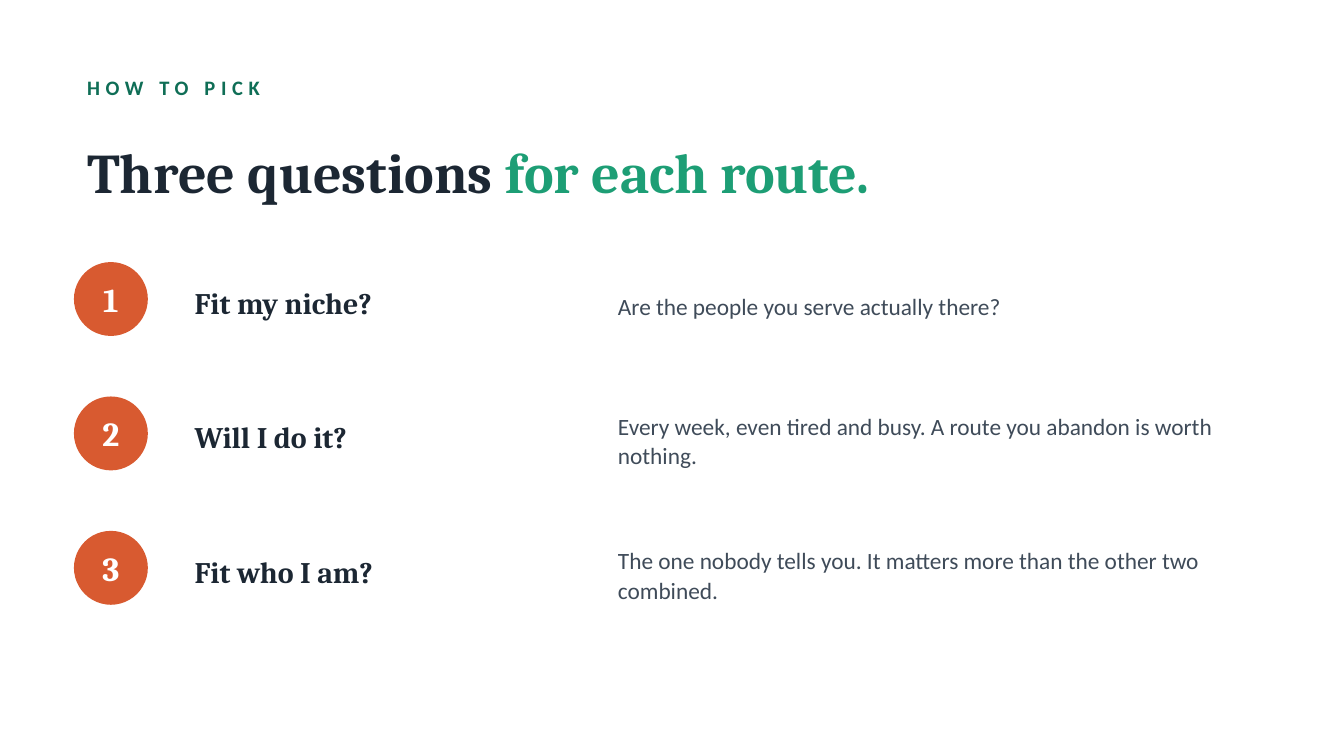
import pptx
import pptx.dml.color
import pptx.enum.shapes
import pptx.enum.text
import pptx.util

Inches = pptx.util.Inches
ALIGN = pptx.enum.text.PP_ALIGN

KICKER = "HOW TO PICK"
TITLE = [("Three questions ", "1C2733"), ("for each route.", "1D9E75")]
QUESTIONS = [
    ("Fit my niche?", "Are the people you serve actually there?"),
    ("Will I do it?", "Every week, even tired and busy. A route you abandon is worth nothing."),
    ("Fit who I am?", "The one nobody tells you. It matters more than the other two combined."),
]

SLIDE_WIDTH = 10
LEFT, WIDTH = 0.55, 8.9
FIRST_ROW, ROW_STEP = 1.9, 1
CIRCLE = 0.55


def rgb(value):
    return pptx.dml.color.RGBColor.from_string(value)


def add_text(slide, box, runs, font, size, bold=False, align=ALIGN.LEFT):
    """Add a middle-anchored one-paragraph box; runs are (text, colour) pairs."""
    tf = slide.shapes.add_textbox(*map(Inches, box)).text_frame
    tf.word_wrap = True
    tf.vertical_anchor = pptx.enum.text.MSO_ANCHOR.MIDDLE
    p = tf.paragraphs[0]
    p.alignment = align
    p.font.name = font
    p.font.size = pptx.util.Pt(size)
    p.font.bold = bold
    for text, color in runs:
        r = p.add_run()
        r.text = text
        r.font.color.rgb = rgb(color)
    return p


def add_circle(slide, box):
    sp = slide.shapes.add_shape(pptx.enum.shapes.MSO_SHAPE.OVAL, *map(Inches, box))
    sp.shadow.inherit = False
    sp.fill.solid()
    sp.fill.fore_color.rgb = rgb("D85A30")
    sp.line.fill.background()


def main():
    prs = pptx.Presentation()
    prs.slide_width = Inches(SLIDE_WIDTH)
    prs.slide_height = Inches(SLIDE_WIDTH * 9 / 16)
    s = prs.slides.add_slide(prs.slide_layouts[6])
    s.background.fill.solid()
    s.background.fill.fore_color.rgb = rgb("FFFFFF")

    p = add_text(s, (LEFT, 0.5, WIDTH, 0.3), [(KICKER, "0F6E56")], "Calibri", 11, bold=True)
    p.runs[0].font._element.set("spc", "300")
    add_text(s, (LEFT, 0.85, WIDTH, 0.85), TITLE, "Cambria", 30, bold=True)

    for i, (question, answer) in enumerate(QUESTIONS):
        top = FIRST_ROW + i * ROW_STEP
        circle = (LEFT, top + 0.05, CIRCLE, CIRCLE)
        add_circle(s, circle)
        add_text(s, circle, [(str(i + 1), "FFFFFF")], "Cambria", 18, bold=True, align=ALIGN.CENTER)
        add_text(s, (1.35, top, 3, 0.7), [(question, "1C2733")], "Cambria", 16, bold=True)
        p = add_text(s, (4.5, top, 5, 0.75), [(answer, "3F4B59")], "Calibri", 12.5)
        p.line_spacing = 1.05

    prs.save("out.pptx")


if __name__ == "__main__":
    main()
